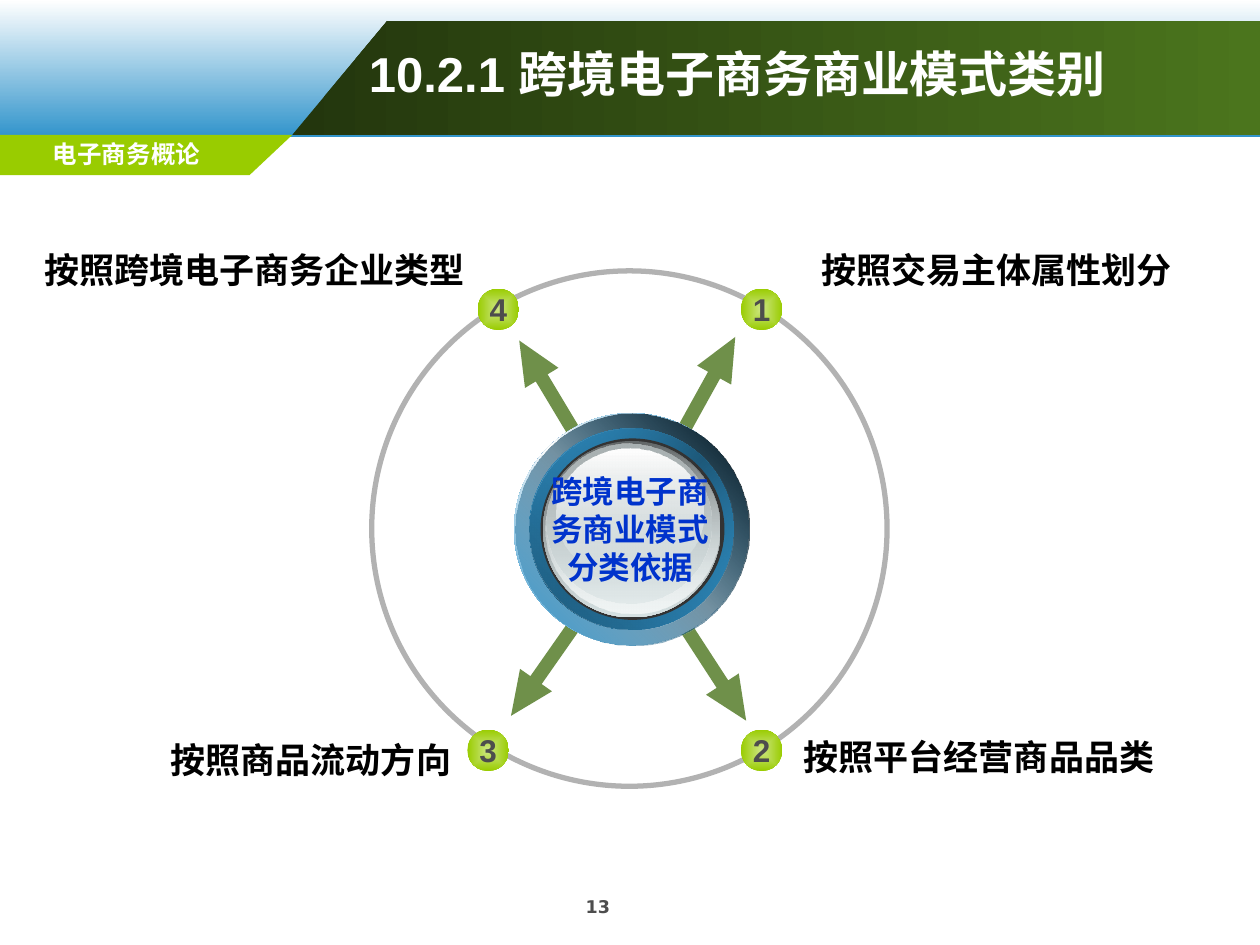
from dataclasses import dataclass

from lxml.etree import SubElement
from pptx import Presentation
from pptx.dml.color import RGBColor
from pptx.enum.shapes import MSO_SHAPE
from pptx.enum.text import MSO_ANCHOR, PP_ALIGN
from pptx.oxml.ns import qn
from pptx.util import Inches, Pt


@dataclass(frozen=True)
class Theme:
    sans: str = "Arial"
    alt: str = "DejaVu Sans"
    white: str = "FFFFFF"
    black: str = "000000"
    gray: str = "4D4D4D"
    ring: str = "B2B2B2"
    rim: str = "333333"
    sky: str = "3194CB"
    navy: str = "1B506E"
    deep: str = "1F5E81"
    dark: str = "23360D"
    green: str = "4B751D"
    lime: str = "99CC00"
    pale: str = "CDE683"
    ink: str = "0033CC"
    steel: str = "636869"
    mist: str = "D6E1E2"
    frost: str = "F1F5F5"
    ash: str = "AAB2B3"
    title: int = 28
    label: int = 20
    core: int = 18
    tag: int = 14
    page: int = 10


def write(shape, text, size, color, font, align=PP_ALIGN.LEFT,
          anchor=MSO_ANCHOR.TOP, wrap=True, pad=(0.1, 0.05)):
    """Put one bold paragraph into a shape."""
    frame = shape.text_frame
    frame.word_wrap = wrap
    frame.vertical_anchor = anchor
    frame.margin_left = frame.margin_right = Inches(pad[0])
    frame.margin_top = frame.margin_bottom = Inches(pad[1])
    para = frame.paragraphs[0]
    para.alignment = align
    run = para.add_run()
    run.text = text
    run.font.size = Pt(size)
    run.font.bold = True
    run.font.name = font
    run.font.color.rgb = RGBColor.from_string(color)


def tint(node, color, alpha=100):
    """Add a colour, with its opacity in percent, to an XML node."""
    item = SubElement(node, qn("a:srgbClr"), val=color)
    if alpha < 100:
        SubElement(item, qn("a:alpha"), val=str(alpha * 1000))


class Deck:
    def __init__(self, theme):
        self.theme = theme
        self.file = Presentation()
        self.file.slide_width = Inches(10)
        self.file.slide_height = Inches(7.5)
        self.slide = self.file.slides.add_slide(self.file.slide_layouts[6])

    def plain(self, shape, fill=None):
        shape.shadow.inherit = False
        shape.line.fill.background()
        if fill:
            shape.fill.solid()
            shape.fill.fore_color.rgb = RGBColor.from_string(fill)
        else:
            shape.fill.background()
        return shape

    def shape(self, kind, box, fill=None, host=None):
        shapes = (host or self.slide).shapes
        return self.plain(shapes.add_shape(kind, *map(Inches, box)), fill)

    def outline(self, points, fill=None):
        dots = [(Inches(x), Inches(y)) for x, y in points]
        pen = self.slide.shapes.build_freeform(*dots[0])
        pen.add_line_segments(dots[1:], close=True)
        return self.plain(pen.convert_to_shape(), fill)

    def fade(self, shape, *colors, angle=None):
        """Spread (colour, opacity) stops evenly; no angle means from the centre."""
        old = shape._element.spPr.find(qn("a:noFill"))
        grad = old.makeelement(qn("a:gradFill"), {"rotWithShape": "1"})
        stops = SubElement(grad, qn("a:gsLst"))
        for i, (color, alpha) in enumerate(colors):
            place = 100000 * i // (len(colors) - 1)
            tint(SubElement(stops, qn("a:gs"), pos=str(place)), color, alpha)
        if angle is None:
            route = SubElement(grad, qn("a:path"), {"path": "shape"})
            SubElement(route, qn("a:fillToRect"),
                       {side: "50000" for side in "ltrb"})
        else:
            SubElement(grad, qn("a:lin"), ang=str(angle * 60000), scaled="0")
        old.getparent().replace(old, grad)

    def disc(self, box, *colors, angle=None, host=None):
        disc = self.shape(MSO_SHAPE.OVAL, box, host=host)
        self.fade(disc, *colors, angle=angle)
        return disc

    def arrow(self, x, y, turn):
        arrow = self.shape(MSO_SHAPE.RIGHT_ARROW, (x, y, 0.87, 0.31))
        arrow.adjustments[0] = 0.352
        arrow.adjustments[1] = 1.116
        arrow.rotation = turn
        arrow.fill.solid()
        arrow.fill.fore_color.rgb = RGBColor.from_string(self.theme.green)
        node = arrow._element.spPr.find(qn("a:solidFill"))
        node.remove(node[0])
        tint(node, self.theme.green, 80)

    def badge(self, x, y, text):
        t = self.theme
        disc = self.disc((x, y, 0.33, 0.33), (t.pale, 100), (t.lime, 100))
        write(disc, text, t.core, t.gray, t.sans, align=PP_ALIGN.CENTER,
              anchor=MSO_ANCHOR.MIDDLE, wrap=False, pad=(0, 0))

    def text(self, box, text, size, color, font, **form):
        area = self.slide.shapes.add_textbox(*map(Inches, box))
        write(area, text, size, color, font, **form)


def main():
    t = Theme()
    deck = Deck(t)
    mid, right = PP_ALIGN.CENTER, PP_ALIGN.RIGHT

    # Header band and course tag
    sky = deck.shape(MSO_SHAPE.RECTANGLE, (0, 0, 10, 1.09))
    deck.fade(sky, (t.white, 100), (t.sky, 100), angle=90)
    band = deck.outline([(2.32, 1.07), (10, 1.07), (10, 0.17), (3.07, 0.17)])
    deck.fade(band, (t.dark, 100), (t.green, 100), angle=0)
    deck.outline([(0, 1.07), (2.32, 1.07), (1.98, 1.39), (0, 1.39)], t.lime)
    deck.text((0.04, 1.05, 1.93, 0.31), "电子商务概论", t.tag, t.white, t.alt,
              align=mid)

    # Page number and title
    deck.text((3.58, 7.06, 2.33, 0.33), "13", t.page, t.gray, t.alt, align=mid)
    deck.text((2.83, 0.25, 6.89, 0.66), "10.2.1 跨境电子商务商业模式类别",
              t.title, t.white, t.sans, anchor=MSO_ANCHOR.MIDDLE)

    # Arrows and the large ring
    for spot in ((5.19, 2.9, 299), (5.25, 5.2, 57),
                 (3.91, 2.92, 239), (3.87, 5.17, 125)):
        deck.arrow(*spot)
    ring = deck.shape(MSO_SHAPE.OVAL, (2.95, 2.15, 4.09, 4.09))
    ring.line.color.rgb = RGBColor.from_string(t.ring)
    ring.line.width = Pt(3)

    # Labels
    for x, y, wide, text, align in (
            (6.42, 1.92, 2.99, "按照交易主体属性划分", PP_ALIGN.LEFT),
            (0.11, 1.92, 3.68, "按照跨境电子商务企业类型", right),
            (6.28, 5.79, 2.99, "按照平台经营商品品类", PP_ALIGN.LEFT),
            (1.25, 5.81, 2.43, "按照商品流动方向", right)):
        deck.text((x, y, wide, 0.44), text, t.label, t.black, t.sans,
                  align=align, wrap=False)

    # Number badges
    for x, y, text in ((3.79, 2.29, "4"), (5.88, 2.29, "1"),
                       (3.71, 5.79, "3"), (5.88, 5.79, "2")):
        deck.badge(x, y, text)

    # Layered rims of the central button
    outer, inner = (4.08, 3.28, 1.86, 1.84), (4.2, 3.4, 1.62, 1.6)
    blue = (t.sky, 100)
    deck.disc(outer, blue, (t.white, 100), blue, angle=315)
    deck.disc((4.09, *outer[1:]), (t.sky, 32), (t.black, 90), angle=315)
    deck.disc(inner, blue, (t.navy, 100), blue, angle=45)
    deck.disc(inner, (t.deep, 100), (t.sky, 0), angle=315)
    deck.shape(MSO_SHAPE.OVAL, (4.29, 3.48, 1.46, 1.44), t.rim)

    # Glossy face and its caption
    face = deck.slide.shapes.add_group_shape()
    for box, start, end in (
            ((4.31, 3.5, 1.41, 1.4), (t.steel, 100), (t.mist, 100)),
            ((4.33, 3.51, 1.38, 1.36), (t.mist, 0), (t.frost, 100)),
            ((4.34, 3.52, 1.31, 1.27), (t.ash, 100), (t.mist, 48)),
            ((4.42, 3.56, 1.16, 1.03), (t.white, 100), (t.mist, 38))):
        deck.disc(box, start, end, angle=90, host=face)
    deck.text((4.26, 3.7, 1.48, 1.01), "跨境电子商务商业模式分类依据",
              t.core, t.ink, t.sans, align=mid)

    deck.file.save("out.pptx")


if __name__ == "__main__":
    main()
